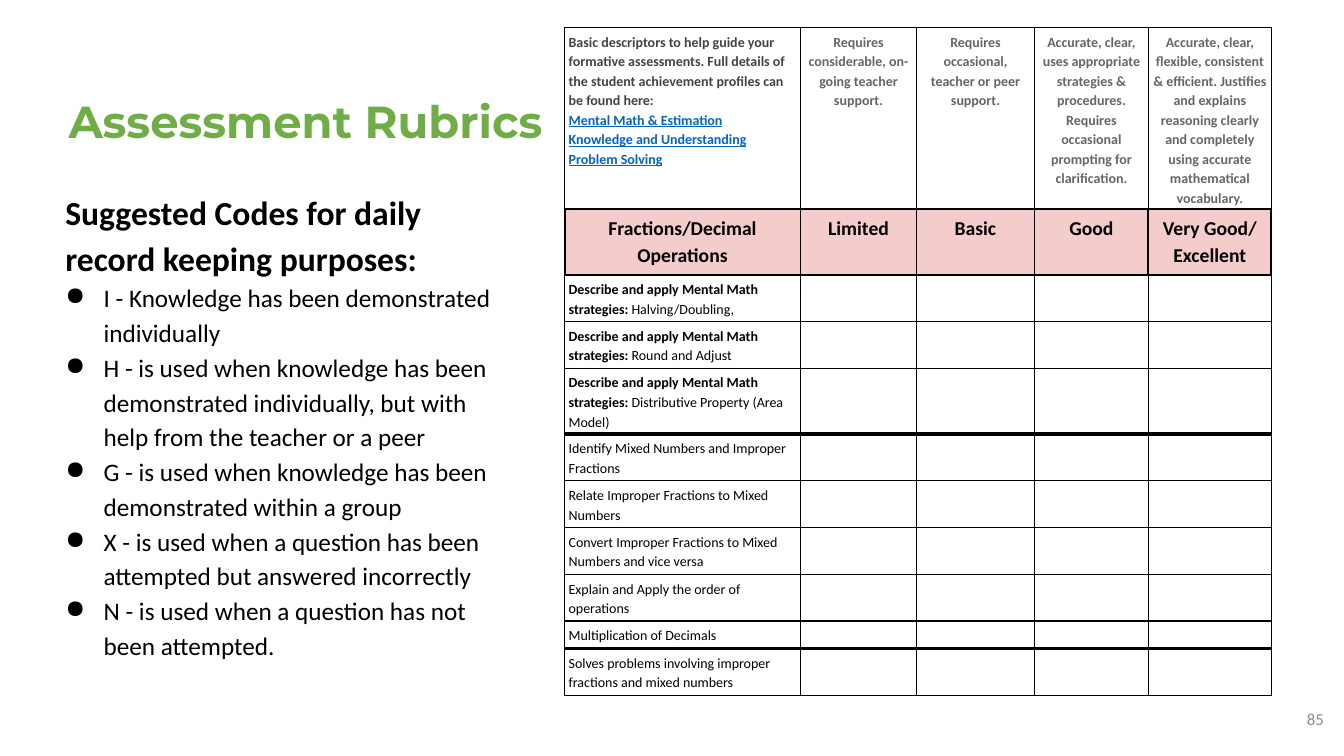
from lxml import etree
from pptx import Presentation, util as u
from pptx.dml.color import RGBColor
from pptx.enum import text
from pptx.oxml.ns import qn

COLORS = {"green": "70AD47", "black": "000000", "gray": "8C8C8C", "dark": "434343",
          "mid": "666666", "link": "0563C1", "pink": "F4CCCC"}
LEFT, CENTER, RIGHT = text.PP_ALIGN.LEFT, text.PP_ALIGN.CENTER, text.PP_ALIGN.RIGHT

CODES_HEADING = "Suggested Codes for daily record keeping purposes:"
CODES = [
    "I - Knowledge has been demonstrated individually",
    "H - is used when knowledge has been demonstrated individually, but with help from the teacher or a peer",
    "G - is used when knowledge has been demonstrated within a group",
    "X - is used when a question has been attempted but answered incorrectly",
    "N - is used when a question has not been attempted.",
]
INTRO = ("Basic descriptors to help guide your formative assessments. "
         "Full details of the student achievement profiles can be found here:")
PROFILES = ["Mental Math & Estimation", "Knowledge and Understanding", "Problem Solving"]
DESCRIPTORS = [
    "Requires considerable, on-going teacher support.",
    "Requires occasional, teacher or peer support.",
    "Accurate, clear, uses appropriate strategies & procedures. "
    "Requires occasional prompting for clarification.",
    "Accurate, clear, flexible, consistent & efficient. Justifies and explains reasoning "
    "clearly and completely using accurate mathematical vocabulary.",
]
LEVELS = ["Fractions/Decimal Operations", "Limited", "Basic", "Good", "Very Good/ Excellent"]
STRATEGY_LABEL = "Describe and apply Mental Math strategies: "
STRATEGIES = ["Halving/Doubling,", "Round and Adjust", "Distributive Property (Area Model)"]
SKILLS = [
    "Identify Mixed Numbers and Improper Fractions",
    "Relate Improper Fractions to Mixed Numbers",
    "Convert Improper Fractions to Mixed Numbers and vice versa",
    "Explain and Apply the order of operations",
    "Multiplication of Decimals",
    "Solves problems involving improper fractions and mixed numbers",
]
COL_WIDTHS = [2.34, 1.15, 1.17, 1.13, 1.22]
ROW_HEIGHTS = [1.79, 0.65, 0.46, 0.46, 0.65, 0.46, 0.46, 0.46, 0.46, 0.26, 0.46]
RULE_WIDTHS = {1: 1.5, 2: 1.5, 5: 3, 10: 3}


def add_run(p, words, size, color="black", bold=False, underline=None, font="Calibri"):
    """Append one formatted run to a paragraph."""
    r = p.add_run()
    r.text = words
    r.font.name, r.font.size, r.font.bold = font, u.Pt(size), bold
    r.font.underline = underline
    r.font.color.rgb = RGBColor.from_string(COLORS[color])


def next_paragraph(tf, first, align=LEFT, spacing=1.15):
    """Return the first or a new paragraph with its alignment and spacing."""
    p = tf.paragraphs[0] if first else tf.add_paragraph()
    p.alignment, p.line_spacing = align, spacing
    return p


def add_box(s, box, inset=None):
    """Add a wrapping text box and return its text frame."""
    tf = s.shapes.add_textbox(*(u.Inches(v) for v in box)).text_frame
    tf.word_wrap = True
    if inset is not None:
        tf.margin_left = tf.margin_right = tf.margin_top = tf.margin_bottom = u.Inches(inset)
    return tf


def add_title(s, box):
    """Place the slide title at the bottom of its box."""
    tf = add_box(s, box, 0.13)
    tf.vertical_anchor = text.MSO_ANCHOR.BOTTOM
    add_run(next_paragraph(tf, True, spacing=1.0), "Assessment Rubrics", 32, "green", True,
            font="Montserrat")


def add_page_number(s, box):
    """Place the page number at the right of its box."""
    add_run(next_paragraph(add_box(s, box, 0.13), True, RIGHT, 1.0), "85", 12, "gray")


def add_codes(s, box):
    """Place the heading and the bulleted record keeping codes."""
    tf = add_box(s, box)
    tf.auto_size = text.MSO_AUTO_SIZE.SHAPE_TO_FIT_TEXT
    add_run(next_paragraph(tf, True), CODES_HEADING, 24, bold=True)
    for code in CODES:
        p = next_paragraph(tf, False)
        add_run(p, code, 18)
        pPr = p._p.get_or_add_pPr()
        pPr.set("marL", str(u.Inches(0.38)))
        pPr.set("indent", str(u.Inches(-0.38)))
        etree.SubElement(pPr, qn("a:buChar"), char="●")


def set_borders(cell, left, right, top, bottom):
    """Draw the four cell borders with the given widths in points."""
    tcPr = cell._tc.get_or_add_tcPr()
    for i, (side, width) in enumerate(zip("LRTB", (left, right, top, bottom))):
        ln = etree.Element(qn(f"a:ln{side}"), w=str(u.Pt(width)))
        fill = etree.SubElement(ln, qn("a:solidFill"))
        etree.SubElement(fill, qn("a:srgbClr"), val=COLORS["black"])
        tcPr.insert(i, ln)


def format_cell(cell, row):
    """Set the margins, fill and borders of a cell from its row."""
    cell.margin_left = cell.margin_right = u.Inches(0.04)
    cell.margin_top = cell.margin_bottom = u.Inches(0.04)
    if row == 1:
        cell.fill.solid()
        cell.fill.fore_color.rgb = RGBColor.from_string(COLORS["pink"])
    else:
        cell.fill.background()
    side = 1.5 if row == 1 else 1
    set_borders(cell, side, side, RULE_WIDTHS.get(row, 1), RULE_WIDTHS.get(row + 1, 1))


def fill_cell(cell, row, col):
    """Write the words that belong to one place in the rubric."""
    tf = cell.text_frame
    p = next_paragraph(tf, True, CENTER if row == 1 or (row == 0 and col) else LEFT)
    if row == 0 and col == 0:
        add_run(p, INTRO, 10, "dark", True)
        for profile in PROFILES:
            add_run(next_paragraph(tf, False), profile, 10, "link", True, True)
    elif row == 0:
        add_run(p, DESCRIPTORS[col - 1], 10, "mid", True)
    elif row == 1:
        add_run(p, LEVELS[col], 14, bold=True)
    elif col:
        etree.SubElement(p._p, qn("a:endParaRPr"), sz="1000")
    elif row < 2 + len(STRATEGIES):
        add_run(p, STRATEGY_LABEL, 10, bold=True)
        add_run(p, STRATEGIES[row - 2], 10)
    else:
        add_run(p, SKILLS[row - 2 - len(STRATEGIES)], 10)


def add_rubric(s, left, top):
    """Place the rubric table with its top left corner at the given point."""
    size = (left, top, sum(COL_WIDTHS), sum(ROW_HEIGHTS))
    table = s.shapes.add_table(len(ROW_HEIGHTS), len(COL_WIDTHS),
                               *(u.Inches(v) for v in size)).table
    table.first_row = table.horz_banding = False
    for column, width in zip(table.columns, COL_WIDTHS):
        column.width = u.Inches(width)
    for i, (row, height) in enumerate(zip(table.rows, ROW_HEIGHTS)):
        row.height = u.Inches(height)
        for j, cell in enumerate(row.cells):
            format_cell(cell, i)
            fill_cell(cell, i, j)


def main():
    """Build the assessment rubrics slide and save it."""
    prs = Presentation()
    prs.slide_width, prs.slide_height = u.Inches(13.33), u.Inches(7.5)
    s = prs.slides.add_slide(prs.slide_layouts[6])
    add_page_number(s, (12.46, 6.93, 0.8, 0.57))
    add_title(s, (0.55, 0.87, 7, 0.72))
    add_codes(s, (0.55, 1.79, 4.43, 4.84))
    add_rubric(s, 5.6, 0.27)
    prs.save("out.pptx")


if __name__ == "__main__":
    main()
